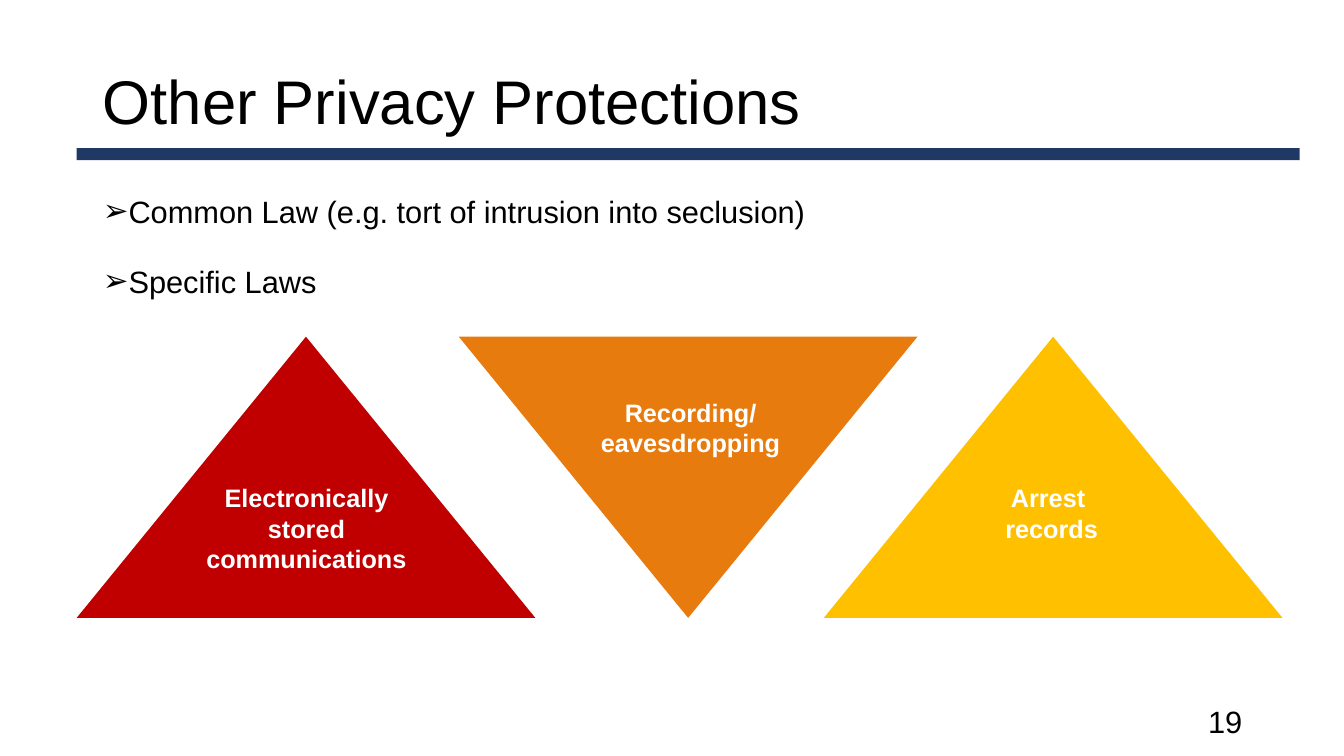
from dataclasses import dataclass

from lxml import etree
from pptx import Presentation
from pptx.dml.color import RGBColor
from pptx.enum.shapes import MSO_SHAPE
from pptx.enum.text import MSO_ANCHOR, MSO_AUTO_SIZE, PP_ALIGN
from pptx.oxml.ns import qn
from pptx.util import Emu, Pt

RECTANGLE, TRIANGLE = MSO_SHAPE.RECTANGLE, MSO_SHAPE.ISOSCELES_TRIANGLE
LEFT, CENTER, RIGHT = PP_ALIGN.LEFT, PP_ALIGN.CENTER, PP_ALIGN.RIGHT
TOP, MIDDLE = MSO_ANCHOR.TOP, MSO_ANCHOR.MIDDLE
NO_AUTOFIT = MSO_AUTO_SIZE.NONE

EMU_PER_PX = 9144  # 100 px to the inch


@dataclass(frozen=True)
class Theme:
    font: str = "Arial"
    text: str = "000000"
    label: str = "FFFFFF"
    rule: str = "203864"
    red: str = "C00000"
    orange: str = "E87B0E"
    yellow: str = "FFC000"
    title_size: int = 44
    body_size: int = 22
    label_size: int = 18


@dataclass(frozen=True)
class Box:
    left: int
    top: int
    width: int
    height: int

    def emu(self) -> list[Emu]:
        return [Emu(px * EMU_PER_PX)
                for px in (self.left, self.top, self.width, self.height)]


@dataclass(frozen=True)
class Protection:
    lines: tuple[str, ...]
    color: str
    triangle_left: int
    label: Box
    rotation: int = 0


THEME = Theme()
TRIANGLE_TOP, TRIANGLE_WIDTH, TRIANGLE_HEIGHT = 334, 455, 279
PROTECTIONS = (
    Protection(("Electronically stored communications",), THEME.red, 76,
               Box(191, 474, 226, 101)),
    Protection(("Recording/", "eavesdropping"), THEME.orange, 455,
               Box(572, 389, 226, 71), rotation=180),
    Protection(("Arrest ", "records"), THEME.yellow, 817,
               Box(930, 474, 226, 71)),
)


def place(shape, box: Box) -> None:
    shape.left, shape.top, shape.width, shape.height = box.emu()


def set_bullet(paragraph, char: str, indent: int) -> None:
    properties = paragraph._p.get_or_add_pPr()
    properties.set("marL", str(indent * EMU_PER_PX))
    properties.set("indent", str(-indent * EMU_PER_PX))
    etree.SubElement(properties, qn("a:buFont"), typeface=THEME.font)
    etree.SubElement(properties, qn("a:buChar"), char=char)


def write(shape, lines: tuple[str, ...], *, size: int, color: str = THEME.text,
          bold: bool = False, align: PP_ALIGN = LEFT, anchor: MSO_ANCHOR = TOP,
          line_spacing: float = 1.0, space_before: int = 0,
          bullet: str = "") -> None:
    frame = shape.text_frame
    frame.auto_size = NO_AUTOFIT
    frame.word_wrap = True
    frame.vertical_anchor = anchor
    frame.text = "\n".join(lines)
    for paragraph in frame.paragraphs:
        paragraph.alignment = align
        paragraph.line_spacing = line_spacing
        paragraph.space_before = Pt(space_before)
        if bullet:
            set_bullet(paragraph, bullet, indent=25)
        for run in paragraph.runs:
            run.font.name = THEME.font
            run.font.size = Pt(size)
            run.font.bold = bold
            run.font.color.rgb = RGBColor.from_string(color)


def add_filled(slide, preset: MSO_SHAPE, box: Box, color: str,
               rotation: int = 0) -> None:
    shape = slide.shapes.add_shape(preset, *box.emu())
    shape.shadow.inherit = False
    shape.fill.solid()
    shape.fill.fore_color.rgb = RGBColor.from_string(color)
    shape.line.fill.background()
    shape.rotation = rotation


def main() -> None:
    presentation = Presentation()
    presentation.slide_width = Emu(1333 * EMU_PER_PX)
    presentation.slide_height = Emu(750 * EMU_PER_PX)
    slide = presentation.slides.add_slide(presentation.slide_layouts[1])

    title = slide.shapes.title
    place(title, Box(92, 40, 1150, 128))
    write(title, ("Other Privacy Protections",), size=THEME.title_size,
          anchor=MIDDLE, line_spacing=0.9)

    sources_of_law = slide.placeholders[1]
    place(sources_of_law, Box(92, 168, 1150, 512))
    write(sources_of_law,
          ("Common Law (e.g. tort of intrusion into seclusion)", "Specific Laws"),
          size=THEME.body_size, line_spacing=1.5, space_before=10, bullet="➢")

    page_number = slide.shapes.add_textbox(*Box(942, 695, 300, 40).emu())
    write(page_number, ("19",), size=THEME.body_size, align=RIGHT, anchor=MIDDLE)

    add_filled(slide, RECTANGLE, Box(76, 147, 1213, 12), THEME.rule)
    for protection in PROTECTIONS:
        outline = Box(protection.triangle_left, TRIANGLE_TOP,
                      TRIANGLE_WIDTH, TRIANGLE_HEIGHT)
        add_filled(slide, TRIANGLE, outline, protection.color, protection.rotation)
    for protection in PROTECTIONS:
        label = slide.shapes.add_textbox(*protection.label.emu())
        write(label, protection.lines, size=THEME.label_size, color=THEME.label,
              bold=True, align=CENTER)

    presentation.save("out.pptx")


if __name__ == "__main__":
    main()
